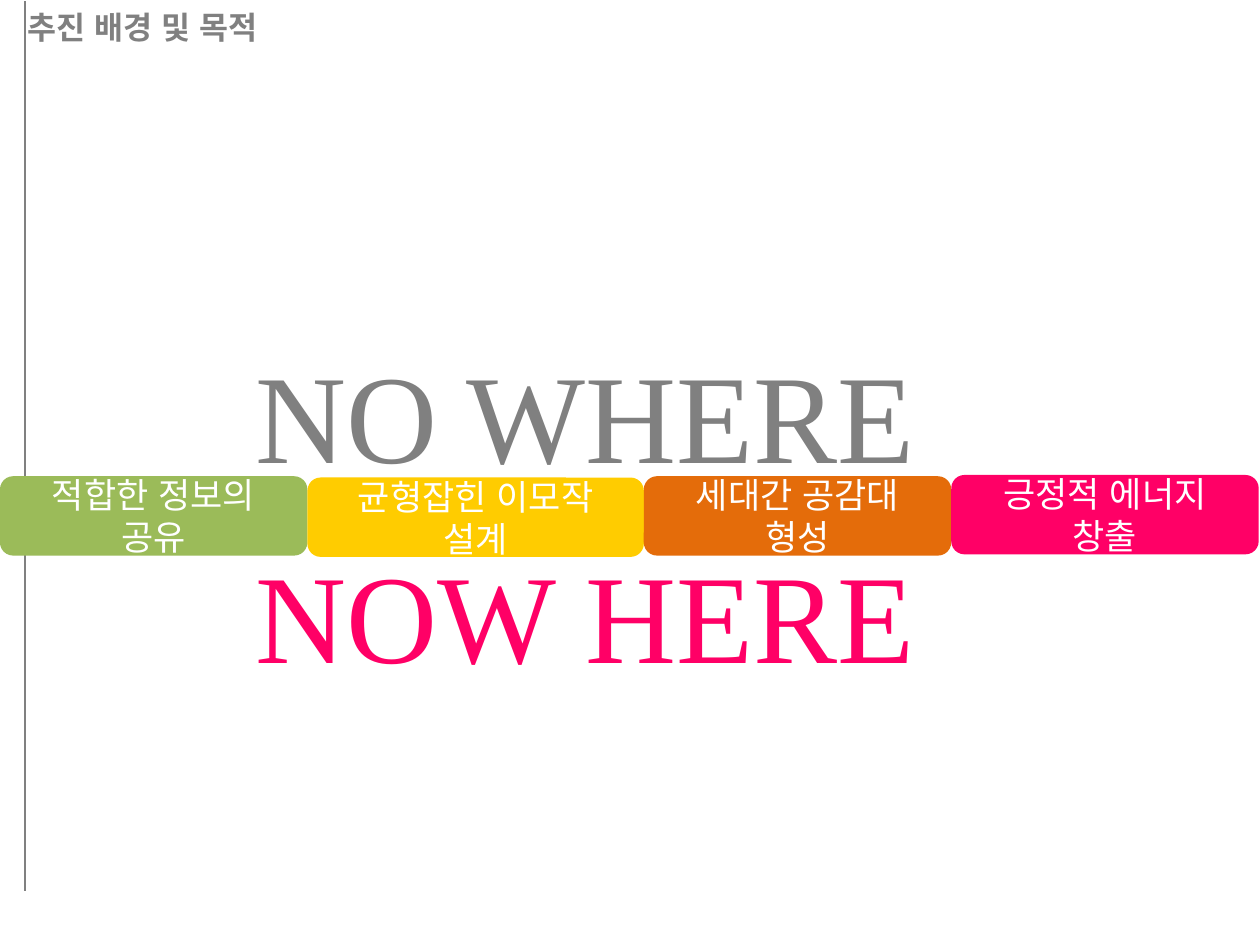
import pptx
import pptx.util
import pptx.dml.color
import pptx.enum.lang
import pptx.enum.shapes
import pptx.enum.text
import pptx.oxml.ns
from lxml import etree

Inches = pptx.util.Inches
Align = pptx.enum.text.PP_ALIGN
Anchor = pptx.enum.text.MSO_ANCHOR
KOREAN_FONT = "Noto Sans CJK KR"
GRAY, PINK, WHITE = "808080", "FF0066", "FFFFFF"


def color(value):
    return pptx.dml.color.RGBColor.from_string(value)


def write(box, text, size, ink, font=KOREAN_FONT, bold=False,
          align=Align.LEFT, anchor=Anchor.MIDDLE):
    frame = box.text_frame
    frame.word_wrap = True
    frame.auto_size = pptx.enum.text.MSO_AUTO_SIZE.NONE
    frame.vertical_anchor = anchor
    para = frame.paragraphs[0]
    para.alignment = align
    span = para.add_run()
    span.text = text
    span.font.size = pptx.util.Pt(size)
    span.font.bold = bold
    span.font.color.rgb = color(ink)
    span.font.name = font
    if font == KOREAN_FONT:
        span.font.language_id = pptx.enum.lang.MSO_LANGUAGE_ID.KOREAN
        east_asian = etree.SubElement(span.font._element, pptx.oxml.ns.qn("a:ea"))
        east_asian.set("typeface", font)


deck = pptx.Presentation()
deck.slide_width, deck.slide_height = Inches(10), Inches(7.5)
page = deck.slides.add_slide(deck.slide_layouts[5])

# Vertical rule at the left edge
rule = page.shapes.add_connector(
    pptx.enum.shapes.MSO_CONNECTOR.STRAIGHT,
    Inches(0.2), Inches(0.01), Inches(0.2), Inches(7.07))
rule.line.color.rgb = color(GRAY)
rule.line.width = pptx.util.Pt(1.25)
etree.SubElement(rule._element.spPr, pptx.oxml.ns.qn("a:effectLst"))

# Large words above and below the band
for words, top, ink in (("NO WHERE", 2.63, GRAY), ("NOW HERE", 4.22, PINK)):
    box = page.shapes.add_textbox(Inches(1.93), Inches(top), Inches(7.17), Inches(1.31))
    write(box, words, 72, ink, font="Times New Roman", anchor=Anchor.TOP)

# Heading, indented past the rule
title = page.shapes.title
title.left, title.top = Inches(-0.12), Inches(0.02)
title.width, title.height = Inches(4.33), Inches(0.39)
title.text_frame.margin_left = Inches(0.34)
write(title, "추진 배경 및 목적", 18, GRAY, bold=True)

# Band of four goals, side by side
goals = (
    ("적합한 정보의 공유", 2.44, 3.78, "9BBB59"),
    ("균형잡힌 이모작 설계", 2.67, 3.79, "FFCC00"),
    ("세대간 공감대 형성", 2.44, 3.78, "E46C0A"),
    ("긍정적 에너지 창출", 2.44, 3.77, PINK),
)
left = 0
for goal, width, top, fill in goals:
    tile = page.shapes.add_shape(
        pptx.enum.shapes.MSO_SHAPE.ROUNDED_RECTANGLE,
        Inches(left), Inches(top), Inches(width), Inches(0.63))
    tile.shadow.inherit = False
    tile.fill.solid()
    tile.fill.fore_color.rgb = color(fill)
    tile.line.fill.background()
    write(tile, goal, 20, WHITE, align=Align.CENTER)
    left += width

deck.save("out.pptx")
